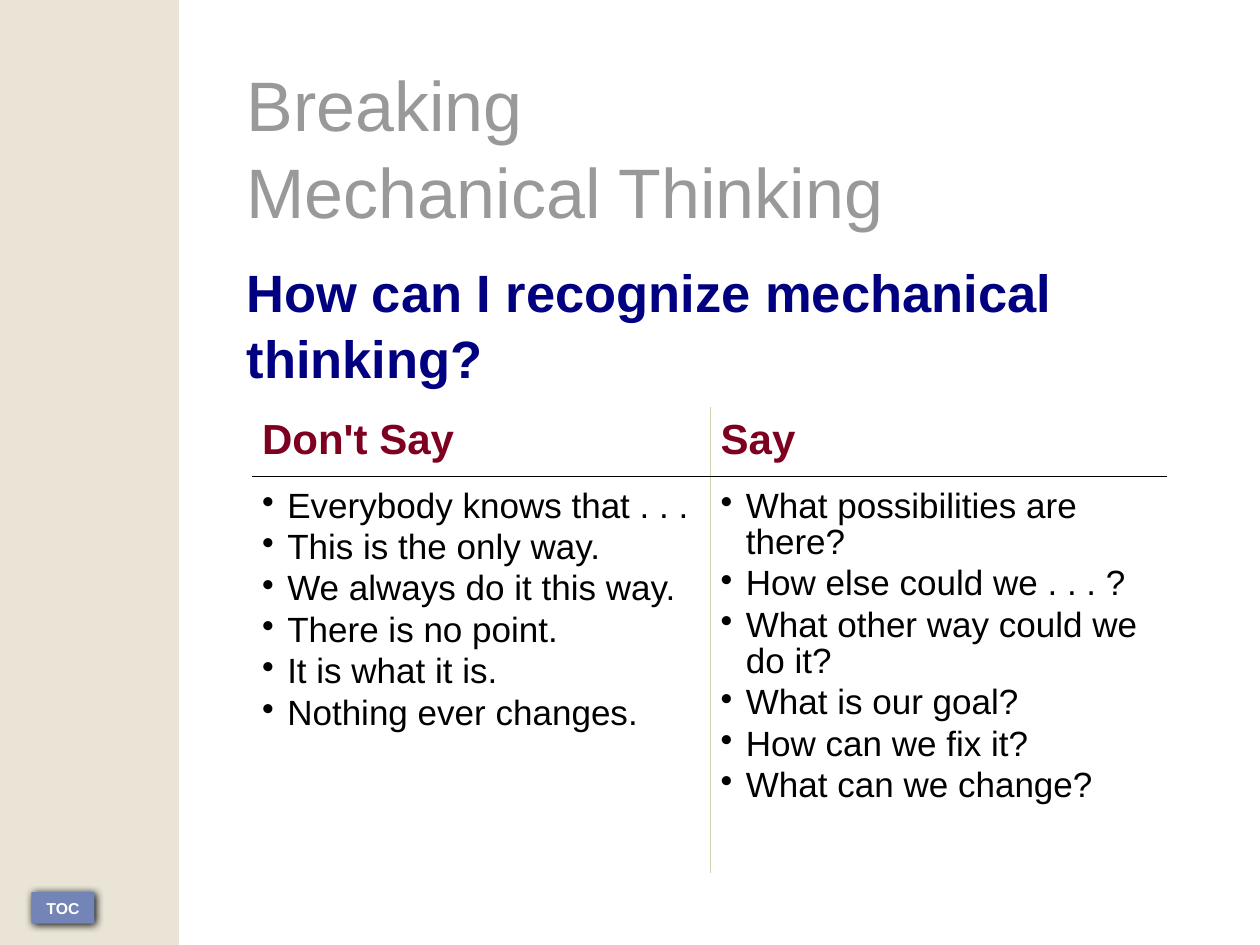
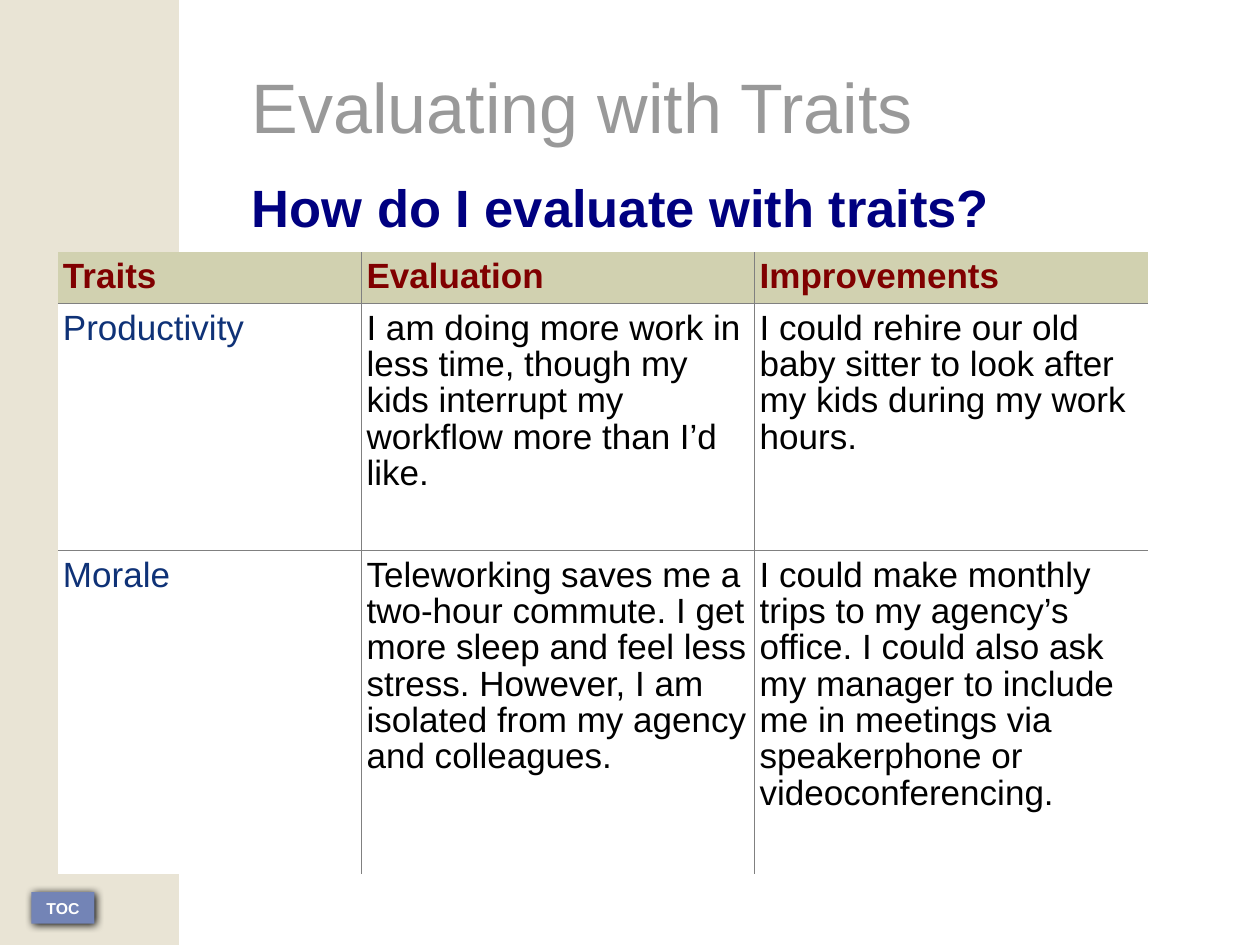
from dataclasses import dataclass

from lxml import etree
from pptx import Presentation
from pptx.dml.color import RGBColor
from pptx.enum.shapes import MSO_SHAPE
from pptx.enum.text import MSO_ANCHOR, PP_ALIGN
from pptx.oxml import parse_xml
from pptx.oxml.ns import nsdecls, qn
from pptx.util import Inches, Pt

RECTANGLE = MSO_SHAPE.RECTANGLE
MIDDLE = MSO_ANCHOR.MIDDLE
CENTER = PP_ALIGN.CENTER


@dataclass(frozen=True)
class Theme:
    font: str = "Arial"
    band: str = "E9E4D5"
    button: str = "7384B6"
    title: str = "999999"
    question: str = "000080"
    phrase_head: str = "7E0021"
    trait_head: str = "800000"
    trait: str = "0F3277"
    olive: str = "D1D1B0"
    gray: str = "808080"
    black: str = "000000"
    white: str = "FFFFFF"
    title_size: float = 40
    question_size: float = 30
    phrase_head_size: float = 24
    body_size: float = 20
    button_size: float = 9
    thin: float = 0.57
    table_spacing: float = 0.93
    title_spacing: float = 1.04


THEME = Theme()


def style(paragraph, size, color, bold=False):
    font = paragraph.font
    font.name = THEME.font
    font.size = Pt(size)
    font.bold = bold
    font.color.rgb = RGBColor.from_string(color)


def set_border(cell, side, line):
    """Draw one side (L, R, T or B) of a cell as (color, points), or clear it with None."""
    border = etree.SubElement(cell._tc.get_or_add_tcPr(), qn(f"a:ln{side}"))
    if line is None:
        etree.SubElement(border, qn("a:noFill"))
        return
    color, points = line
    border.set("w", str(Pt(points)))
    fill = etree.SubElement(border, qn("a:solidFill"))
    etree.SubElement(fill, qn("a:srgbClr"), val=color)


PAGES = [
    dict(
        title="Breaking\vMechanical Thinking",
        question="How can I recognize mechanical thinking?",
        heading_box=(1.86, 0.38, 7.4, 6.6),
        table_corner=(2, 3.23),
        columns=[3.64, 3.62],
        rows=[0.55, 3.15],
        insets=(0.08, 0.1),
        column_line=(THEME.olive, THEME.thin),
        row_line=(THEME.black, 1),
        head_fill=THEME.white,
        head_style=(THEME.phrase_head_size, THEME.phrase_head, True),
        first_column_color=THEME.black,
        bulleted=True,
        cells=[
            ["Don't Say", "Say"],
            [
                "Everybody knows that . . .\nThis is the only way.\n"
                "We always do it this way.\nThere is no point.\n"
                "It is what it is.\nNothing ever changes.",
                "What possibilities are there?\nHow else could we . . . ?\n"
                "What other way could we do it?\nWhat is our goal?\n"
                "How can we fix it?\nWhat can we change?",
            ],
        ],
    ),
    dict(
        title="Evaluating with Traits",
        question="How do I evaluate with traits?",
        heading_box=(1.9, 0.4, 7.7, 1.7),
        table_corner=(0.46, 2),
        columns=[2.41, 3.12, 3.12],
        rows=[0.41, 1.96, 2.57],
        insets=(0.04, 0.06),
        column_line=(THEME.gray, THEME.thin),
        row_line=(THEME.gray, THEME.thin),
        head_fill=THEME.olive,
        head_style=(THEME.body_size, THEME.trait_head, True),
        first_column_color=THEME.trait,
        bulleted=False,
        cells=[
            ["Traits", "Evaluation", "Improvements"],
            [
                "Productivity",
                "I am doing more work in less time, though my kids interrupt "
                "my workflow more than I’d like.",
                "I could rehire our old baby sitter to look after my kids "
                "during my work hours.",
            ],
            [
                "Morale",
                "Teleworking saves me a two-hour commute. I get more sleep and "
                "feel less stress. However, I am isolated from my agency and "
                "colleagues.",
                "I could make monthly trips to my agency’s office. I could also "
                "ask my manager to include me in meetings via speakerphone or "
                "videoconferencing.",
            ],
        ],
    ),
]

prs = Presentation()
prs.slide_width = Inches(10)
prs.slide_height = Inches(7.5)
blank = prs.slide_layouts[6]

for page in PAGES:
    slide = prs.slides.add_slide(blank)

    # Side band and contents button
    band = slide.shapes.add_shape(RECTANGLE, 0, 0, Inches(1.42), prs.slide_height)
    button = slide.shapes.add_shape(
        RECTANGLE, Inches(0.25), Inches(7.08), Inches(0.5), Inches(0.25)
    )
    for panel, color in ((band, THEME.band), (button, THEME.button)):
        panel.fill.solid()
        panel.fill.fore_color.rgb = RGBColor.from_string(color)
        panel.line.fill.background()
        panel.shadow.inherit = False
    button._element.spPr.find(qn("a:effectLst")).append(parse_xml(
        f'<a:outerShdw {nsdecls("a")} blurRad="{Pt(5)}" dist="{Pt(1.4)}" '
        f'dir="2700000" algn="ctr" rotWithShape="0">'
        f'<a:srgbClr val="{THEME.black}"/></a:outerShdw>'
    ))
    label = button.text_frame
    label.text = "TOC"
    label.word_wrap = False
    label.vertical_anchor = MIDDLE
    label.paragraphs[0].alignment = CENTER
    style(label.paragraphs[0], THEME.button_size, THEME.white, True)

    # Title and question
    heading = slide.shapes.add_textbox(*map(Inches, page["heading_box"])).text_frame
    heading.word_wrap = True
    heading.margin_top = Inches(0.08)
    title = heading.paragraphs[0]
    title.text = page["title"]
    title.space_after = Pt(14.4)
    style(title, THEME.title_size, THEME.title)
    question = heading.add_paragraph()
    question.text = page["question"]
    style(question, THEME.question_size, THEME.question, True)
    for paragraph in heading.paragraphs:
        paragraph.line_spacing = THEME.title_spacing

    # Table with inner rules only
    columns, rows = page["columns"], page["rows"]
    left, top = page["table_corner"]
    table = slide.shapes.add_table(
        len(rows), len(columns), Inches(left), Inches(top),
        Inches(sum(columns)), Inches(sum(rows)),
    ).table
    table.first_row = False
    table.horz_banding = False
    for column, width in zip(table.columns, columns):
        column.width = Inches(width)
    for row, height in zip(table.rows, rows):
        row.height = Inches(height)

    side_inset, top_inset = page["insets"]
    for r, texts in enumerate(page["cells"]):
        for c, text in enumerate(texts):
            cell = table.cell(r, c)
            set_border(cell, "L", page["column_line"] if c > 0 else None)
            set_border(cell, "R", page["column_line"] if c < len(columns) - 1 else None)
            set_border(cell, "T", page["row_line"] if r > 0 else None)
            set_border(cell, "B", page["row_line"] if r < len(rows) - 1 else None)
            cell.fill.solid()
            cell.fill.fore_color.rgb = RGBColor.from_string(
                THEME.white if r else page["head_fill"]
            )
            cell.margin_left = cell.margin_right = cell.margin_bottom = Inches(side_inset)
            cell.margin_top = Inches(top_inset)
            cell.text_frame.text = text
            body_color = THEME.black if c else page["first_column_color"]
            for paragraph in cell.text_frame.paragraphs:
                if r and page["bulleted"]:
                    props = paragraph._p.get_or_add_pPr()
                    props.set("marL", str(Inches(0.2)))
                    props.set("indent", str(-Inches(0.2)))
                    bullet_color = etree.SubElement(props, qn("a:buClr"))
                    etree.SubElement(bullet_color, qn("a:srgbClr"), val=THEME.black)
                    etree.SubElement(props, qn("a:buChar"), char="•")
                    paragraph.space_after = Pt(2.9)
                paragraph.line_spacing = THEME.table_spacing
                style(paragraph, *((THEME.body_size, body_color) if r else page["head_style"]))

prs.save("out.pptx")
